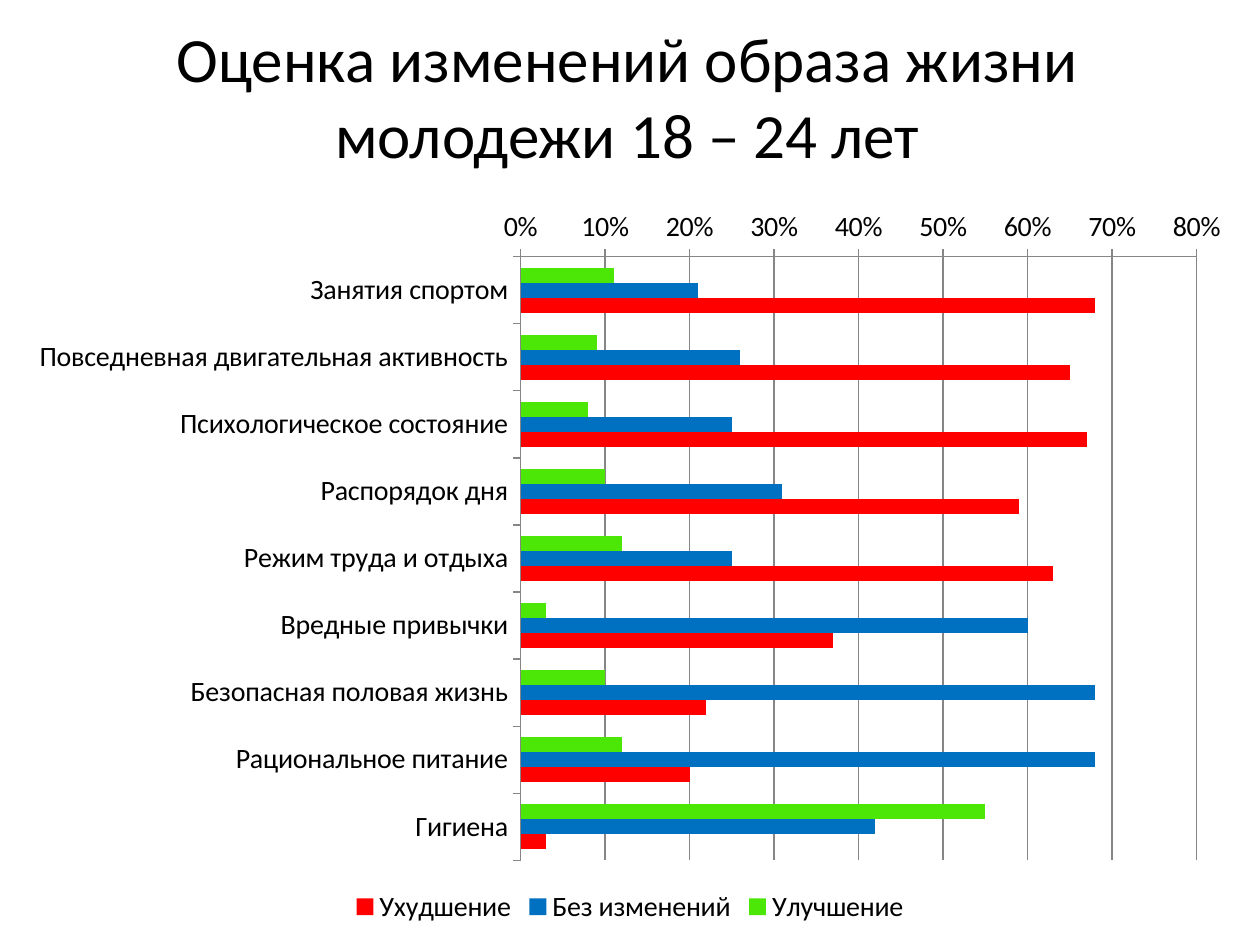
from pptx import Presentation
from pptx import util as u
from pptx.chart.data import CategoryChartData
from pptx.dml.color import RGBColor
from pptx.enum import chart as c
from pptx.enum import text

FONT = "Calibri"
BLACK = "000000"
GREY = "868686"

LIFESTYLE = {
    "Занятия спортом": (0.11, 0.21, 0.68),
    "Повседневная двигательная активность": (0.09, 0.26, 0.65),
    "Психологическое состояние": (0.08, 0.25, 0.67),
    "Распорядок дня": (0.1, 0.31, 0.59),
    "Режим труда и отдыха": (0.12, 0.25, 0.63),
    "Вредные привычки": (0.03, 0.6, 0.37),
    "Безопасная половая жизнь": (0.1, 0.68, 0.22),
    "Рациональное питание": (0.12, 0.68, 0.2),
    "Гигиена": (0.55, 0.42, 0.03),
}
SERIES_COLORS = {
    "Улучшение": "4CE707",
    "Без изменений": "0070C0",
    "Ухудшение": "FF0000",
}


def paint(color_format, color):
    color_format.rgb = RGBColor.from_string(color)


def style_font(font, size):
    font.name = FONT
    font.size = u.Pt(size)
    paint(font.color, BLACK)


def style_line(line):
    paint(line.color, GREY)
    line.width = u.Pt(0.75)


def place_title(slide, left, top, width, height):
    title = slide.shapes.title
    title.left, title.top, title.width, title.height = left, top, width, height
    frame = title.text_frame
    frame.text = "Оценка изменений образа жизни\vмолодежи 18 – 24 лет"
    frame.vertical_anchor = text.MSO_ANCHOR.MIDDLE
    paragraph = frame.paragraphs[0]
    paragraph.alignment = text.PP_ALIGN.CENTER
    style_font(paragraph.font, 36)


def place_chart(slide, left, top, width, height):
    data = CategoryChartData(number_format="0%")
    data.categories = list(LIFESTYLE)
    for name, values in zip(SERIES_COLORS, zip(*LIFESTYLE.values())):
        data.add_series(name, values)
    chart = slide.shapes.add_chart(
        c.XL_CHART_TYPE.BAR_CLUSTERED, left, top, width, height, data
    ).chart
    style_font(chart.font, 16)
    chart.has_title = False
    chart.has_legend = True
    chart.legend.position = c.XL_LEGEND_POSITION.BOTTOM
    chart.legend.include_in_layout = False

    plot = chart.plots[0]
    plot.gap_width = 150
    plot.vary_by_categories = False
    for series in plot.series:
        series.format.fill.solid()
        paint(series.format.fill.fore_color, SERIES_COLORS[series.name])

    for axis in (chart.category_axis, chart.value_axis):
        axis.major_tick_mark = c.XL_TICK_MARK.OUTSIDE
        axis.minor_tick_mark = c.XL_TICK_MARK.NONE
        style_line(axis.format.line)
    chart.category_axis.reverse_order = True

    value_axis = chart.value_axis
    value_axis.minimum_scale = 0
    value_axis.maximum_scale = 0.8
    value_axis.major_unit = 0.1
    value_axis.has_major_gridlines = True
    style_line(value_axis.major_gridlines.format.line)
    value_axis.tick_labels.number_format = "0%"
    value_axis.tick_labels.number_format_is_linked = False


def main():
    presentation = Presentation()
    presentation.slide_width = u.Cm(25.4)
    presentation.slide_height = u.Cm(19.05)
    slide = presentation.slides.add_slide(presentation.slide_layouts[5])
    place_title(slide, u.Cm(0), u.Cm(0.33), u.Cm(25.3), u.Cm(3.18))
    place_chart(slide, u.Cm(0.3), u.Cm(3.94), u.Cm(24.8), u.Cm(14.8))
    presentation.save("out.pptx")


if __name__ == "__main__":
    main()
